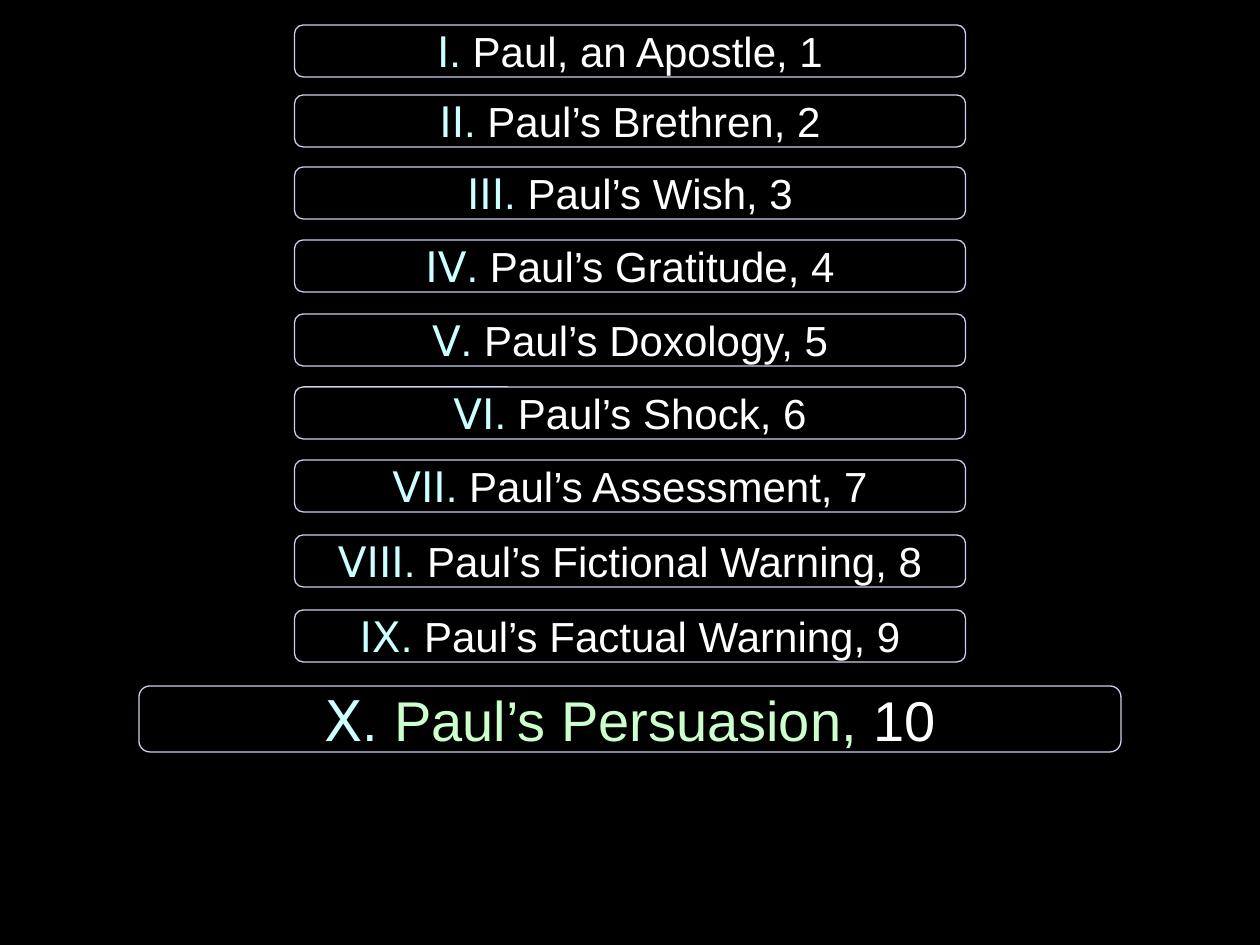
"""Build an outline slide of ten stacked headings with the last one highlighted."""
from dataclasses import dataclass

from pptx import Presentation
from pptx.dml.color import RGBColor
from pptx.enum.shapes import MSO_SHAPE
from pptx.enum.text import MSO_ANCHOR, PP_ALIGN
from pptx.util import Emu, Pt

ROUNDED = MSO_SHAPE.ROUNDED_RECTANGLE
MIDDLE = MSO_ANCHOR.MIDDLE
CENTER = PP_ALIGN.CENTER
BLANK_LAYOUT = 6

HEADINGS = [
    ("I", "Paul, an Apostle, ", 25),
    ("II", "Paul’s Brethren, ", 95),
    ("III", "Paul’s Wish, ", 167),
    ("IV", "Paul’s Gratitude, ", 240),
    ("V", "Paul’s Doxology, ", 314),
    ("VI", "Paul’s Shock, ", 387),
    ("VII", "Paul’s Assessment, ", 460),
    ("VIII", "Paul’s Fictional Warning, ", 535),
    ("IX", "Paul’s Factual Warning, ", 610),
    ("X", "Paul’s Persuasion, ", 686),
]

SLIDE_WIDTH, SLIDE_HEIGHT = 1260, 945
NORMAL_BOX = (671, 52)
CURRENT_BOX = (982, 66)


@dataclass(frozen=True)
class Theme:
    background: RGBColor = RGBColor(0x00, 0x00, 0x00)
    outline: RGBColor = RGBColor(0xCE, 0xCE, 0xEF)
    numeral: RGBColor = RGBColor(0xCC, 0xFF, 0xFF)
    text: RGBColor = RGBColor(0xFF, 0xFF, 0xFF)
    current: RGBColor = RGBColor(0xCC, 0xFF, 0xCC)
    font: str = "Arial"
    numeral_font: str = "DejaVu Sans"
    normal_size: Pt = Pt(24)
    current_size: Pt = Pt(32)
    outline_width: Pt = Pt(0.75)


THEME = Theme()


def px(value):
    return Emu(round(value * 914400 / 126))


def add_run(paragraph, text, color):
    run = paragraph.add_run()
    run.text = text
    run.font.color.rgb = color
    return run


def add_heading(slide, numeral, title, top, verse, is_current):
    width, height = CURRENT_BOX if is_current else NORMAL_BOX
    left = (SLIDE_WIDTH - width) / 2
    shape = slide.shapes.add_shape(ROUNDED, px(left), px(top), px(width), px(height))
    shape.shadow.inherit = False
    shape.fill.solid()
    shape.fill.fore_color.rgb = THEME.background
    shape.line.color.rgb = THEME.outline
    shape.line.width = THEME.outline_width

    shape.text_frame.vertical_anchor = MIDDLE
    paragraph = shape.text_frame.paragraphs[0]
    paragraph.alignment = CENTER
    paragraph.font.name = THEME.font
    paragraph.font.size = THEME.current_size if is_current else THEME.normal_size
    add_run(paragraph, numeral, THEME.numeral).font.name = THEME.numeral_font
    add_run(paragraph, ". ", THEME.numeral)
    add_run(paragraph, title, THEME.current if is_current else THEME.text)
    add_run(paragraph, str(verse), THEME.text)


def main():
    presentation = Presentation()
    presentation.slide_width = px(SLIDE_WIDTH)
    presentation.slide_height = px(SLIDE_HEIGHT)
    slide = presentation.slides.add_slide(presentation.slide_layouts[BLANK_LAYOUT])
    slide.background.fill.solid()
    slide.background.fill.fore_color.rgb = THEME.background
    for verse, (numeral, title, top) in enumerate(HEADINGS, start=1):
        add_heading(slide, numeral, title, top, verse, verse == len(HEADINGS))
    presentation.save("out.pptx")


if __name__ == "__main__":
    main()
